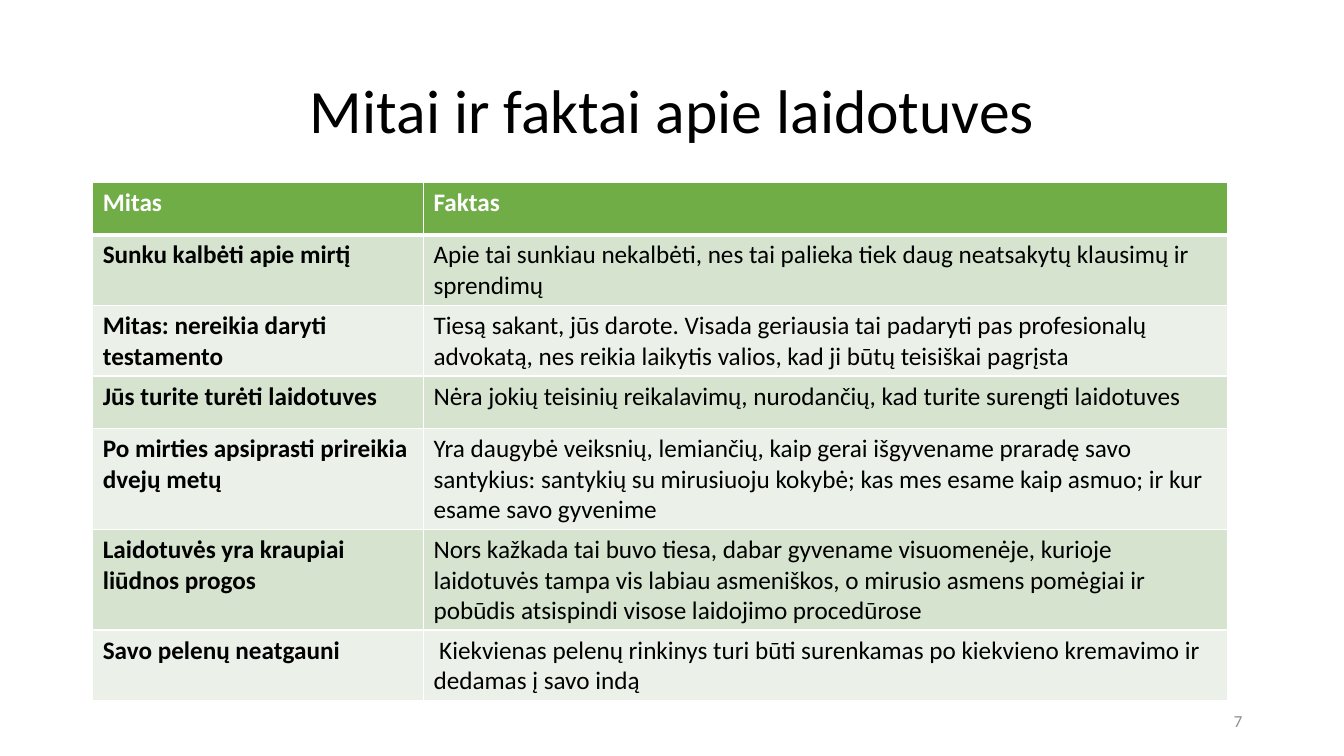
from lxml import etree
from pptx import Presentation
from pptx.dml.color import RGBColor
from pptx.enum.text import MSO_ANCHOR, PP_ALIGN
from pptx.oxml.ns import qn
from pptx.util import Inches, Pt

MIDDLE = MSO_ANCHOR.MIDDLE
CENTER, RIGHT = PP_ALIGN.CENTER, PP_ALIGN.RIGHT

FONT = "Calibri"
COLORS = {
    "text": "000000",
    "white": "FFFFFF",
    "header": "70AD47",
    "band_dark": "D5E3CF",
    "band_light": "EBF1E9",
    "page_number": "8C8C8C",
}

COLUMN_WIDTHS = [3.28, 7.98]
# Row height, myth, fact; the first row is the header
ROWS = [
    (0.52, "Mitas", "Faktas"),
    (0.7, "Sunku kalbėti apie mirtį",
     "Apie tai sunkiau nekalbėti, nes tai palieka tiek daug neatsakytų klausimų ir sprendimų"),
    (0.7, "Mitas: nereikia daryti testamento",
     "Tiesą sakant, jūs darote. Visada geriausia tai padaryti pas profesionalų advokatą, "
     "nes reikia laikytis valios, kad ji būtų teisiškai pagrįsta"),
    (0.52, "Jūs turite turėti laidotuves",
     "Nėra jokių teisinių reikalavimų, nurodančių, kad turite surengti laidotuves"),
    (1, "Po mirties apsiprasti prireikia dvejų metų",
     "Yra daugybė veiksnių, lemiančių, kaip gerai išgyvename praradę savo santykius: "
     "santykių su mirusiuoju kokybė; kas mes esame kaip asmuo; ir kur esame savo gyvenime"),
    (1, "Laidotuvės yra kraupiai liūdnos progos",
     "Nors kažkada tai buvo tiesa, dabar gyvename visuomenėje, kurioje laidotuvės tampa vis "
     "labiau asmeniškos, o mirusio asmens pomėgiai ir pobūdis atsispindi visose laidojimo procedūrose"),
    (0.7, "Savo pelenų neatgauni",
     " Kiekvienas pelenų rinkinys turi būti surenkamas po kiekvieno kremavimo ir dedamas į savo indą"),
]


def style_paragraph(paragraph, size, color, bold=False):
    paragraph.font.name = FONT
    paragraph.font.size = Pt(size)
    paragraph.font.bold = bold
    paragraph.font.color.rgb = RGBColor.from_string(COLORS[color])


def set_borders(cell, widths):
    properties = cell._tc.get_or_add_tcPr()
    for index, (side, width) in enumerate(widths.items()):
        line = etree.Element(qn(f"a:ln{side}"), w=str(Pt(width)))
        fill = etree.SubElement(line, qn("a:solidFill"))
        etree.SubElement(fill, qn("a:srgbClr"), val=COLORS["white"])
        properties.insert(index, line)


prs = Presentation()
prs.slide_width = Inches(13.33)
prs.slide_height = Inches(7.5)
slide = prs.slides.add_slide(prs.slide_layouts[6])

# Title and page number
for text, box, size, color, align, spacing in [
    ("Mitai ir faktai apie laidotuves", (0.92, 0.4, 11.5, 1.45), 44, "text", CENTER, 0.9),
    ("7", (9.42, 6.95, 3, 0.4), 12, "page_number", RIGHT, 1.0),
]:
    frame = slide.shapes.add_textbox(*map(Inches, box)).text_frame
    frame.word_wrap = True
    frame.vertical_anchor = MIDDLE
    line = frame.paragraphs[0]
    line.text = text
    line.alignment = align
    line.line_spacing = spacing
    style_paragraph(line, size, color)

# Table of myths and facts
myths = slide.shapes.add_table(
    len(ROWS), len(COLUMN_WIDTHS), Inches(0.92), Inches(1.81),
    Inches(sum(COLUMN_WIDTHS)), Inches(sum(row[0] for row in ROWS))).table
for column, width in zip(myths.columns, COLUMN_WIDTHS):
    column.width = Inches(width)

for r, (height, *texts) in enumerate(ROWS):
    myths.rows[r].height = Inches(height)
    is_header = r == 0
    band = "header" if is_header else "band_dark" if r % 2 else "band_light"
    for c, text in enumerate(texts):
        cell = myths.cell(r, c)
        cell.text = text
        style_paragraph(cell.text_frame.paragraphs[0], 18,
                        "white" if is_header else "text", bold=is_header or c == 0)
        cell.fill.solid()
        cell.fill.fore_color.rgb = RGBColor.from_string(COLORS[band])
        # A thick rule separates the header from the body
        set_borders(cell, {"L": 1, "R": 1, "T": 3 if r == 1 else 1, "B": 3 if is_header else 1})

prs.save("out.pptx")
